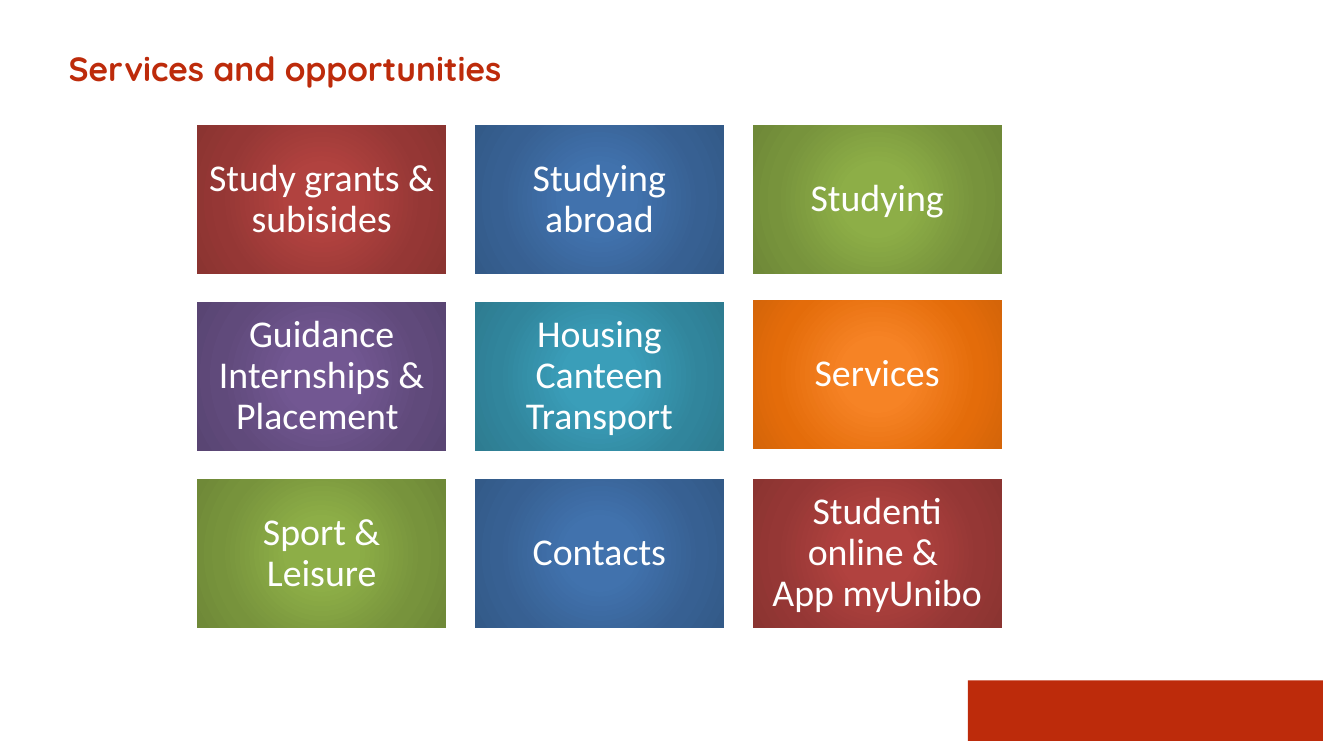
from pptx import Presentation
from pptx import util as u
from pptx.dml.color import RGBColor
from pptx.enum import shapes, text
from pptx.oxml import parse_xml
from pptx.oxml.ns import nsdecls

COLORS = {"brand": "BD2B0B", "white": "FFFFFF"}
# Centre, middle and edge shade of each tile
SHADES = {
    "red": ("B1423F", "953735", "8B3431"),
    "blue": ("4172AD", "376092", "335A88"),
    "green": ("8DAE47", "77933C", "6F8938"),
    "purple": ("725792", "604A7B", "594573"),
    "teal": ("3A9EB9", "31859C", "2E7C91"),
    "orange": ("F68325", "E46C0A", "D56509"),
}


def write(frame, words, *, font, size, color, bold=False, spacing=0.9,
          align=text.PP_ALIGN.CENTER, anchor=text.MSO_ANCHOR.MIDDLE, inset=0.11):
    frame.word_wrap = True
    frame.auto_size = text.MSO_AUTO_SIZE.NONE
    frame.vertical_anchor = anchor
    frame.margin_left = frame.margin_right = u.Inches(inset)
    frame.margin_top = frame.margin_bottom = u.Inches(min(inset, 0.11))
    paragraph = frame.paragraphs[0]
    paragraph.text = words
    paragraph.alignment = align
    paragraph.line_spacing = spacing
    paragraph.space_before = u.Pt(0)
    for run in paragraph.runs:
        run.font.name = font
        run.font.size = u.Pt(size)
        run.font.bold = bold
        run.font.color.rgb = RGBColor.from_string(color)


def radial_fill(shape, shades):
    center, middle, edge = shades
    stops = "".join(
        f'<a:gs pos="{share * 1000}"><a:srgbClr val="{color}"/></a:gs>'
        for share, color in ((0, center), (23, center), (69, middle), (97, edge)))
    gradient = parse_xml(
        f'<a:gradFill {nsdecls("a")} rotWithShape="1"><a:gsLst>{stops}</a:gsLst>'
        '<a:path path="circle"><a:fillToRect l="50000" t="50000" r="50000" b="50000"/>'
        '</a:path></a:gradFill>')
    shape._element.spPr.insert(2, gradient)  # right after the geometry


deck = Presentation()
deck.slide_width, deck.slide_height = u.Inches(13.33), u.Inches(7.5)
slide = deck.slides.add_slide(deck.slide_layouts[5])

# Footer block
footer = slide.shapes.add_shape(shapes.MSO_SHAPE.RECTANGLE, u.Inches(9.6), u.Inches(6.75),
                                u.Inches(3.52), u.Inches(0.6))
footer.shadow.inherit = False
footer.fill.solid()
footer.fill.fore_color.rgb = RGBColor.from_string(COLORS["brand"])
footer.line.fill.background()

# Heading
heading = slide.shapes.title
heading.left, heading.top = u.Inches(0.58), u.Inches(0.52)
heading.width, heading.height = u.Inches(12.28), u.Inches(0.71)
write(heading.text_frame, "Services and opportunities", font="Quicksand", size=24,
      color=COLORS["brand"], bold=True, spacing=u.Pt(22), align=text.PP_ALIGN.LEFT,
      anchor=text.MSO_ANCHOR.TOP, inset=0.1)
heading.text_frame.margin_top = u.Inches(0.05)

# Grid of services, three to a row
services = [
    ("Study grants & subisides", "red"),
    ("Studying abroad", "blue"),
    ("Studying", "green"),
    ("Guidance Internships & Placement ", "purple"),
    ("Housing Canteen Transport", "teal"),
    ("Services", "orange"),
    ("Sport & Leisure", "green"),
    ("Contacts", "blue"),
    ("Studenti online & \nApp myUnibo", "red"),
]
LEFT, TOP, WIDTH, HEIGHT = 1.94, 1.23, 2.5, 1.5
COLUMN_STEP, ROW_STEP = 2.755, 1.755
for index, (service, shade) in enumerate(services):
    row, column = divmod(index, 3)
    raised = 0.02 if service == "Services" else 0  # sits slightly above its row
    tile = slide.shapes.add_shape(
        shapes.MSO_SHAPE.RECTANGLE,
        u.Inches(LEFT + column * COLUMN_STEP), u.Inches(TOP + row * ROW_STEP - raised),
        u.Inches(WIDTH), u.Inches(HEIGHT))
    tile.shadow.inherit = False
    radial_fill(tile, SHADES[shade])
    tile.line.color.rgb = RGBColor.from_string(COLORS["white"])
    tile.line.width = u.Pt(2)
    write(tile.text_frame, service, font="Calibri", size=27, color=COLORS["white"])

deck.save("out.pptx")
